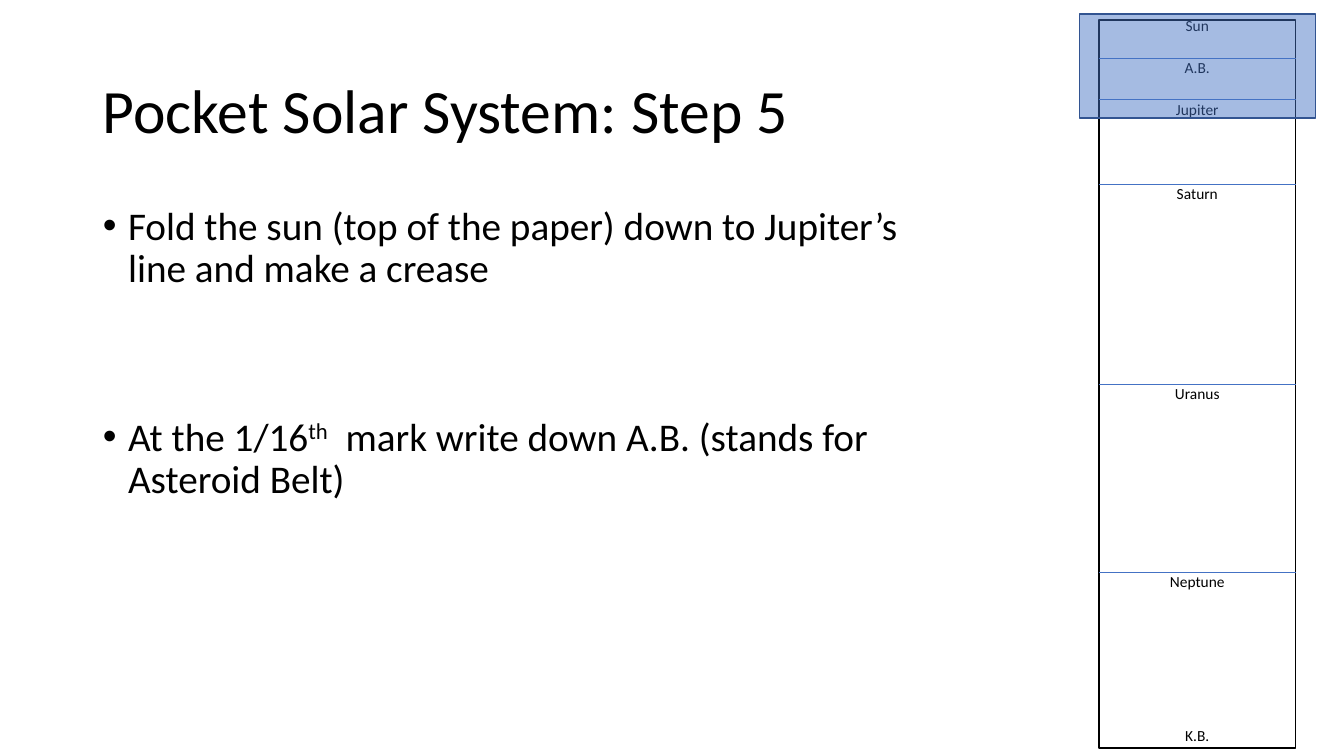
from dataclasses import dataclass

from pptx import Presentation
from pptx.dml.color import RGBColor as RGB
from pptx.enum.shapes import MSO_CONNECTOR as Conn, MSO_SHAPE as Shape
from pptx.enum.text import MSO_ANCHOR as Anchor, MSO_AUTO_SIZE as Fit, PP_ALIGN as Align
from pptx.oxml.ns import qn
from pptx.util import Inches, Pt


@dataclass(frozen=True)
class Theme:
    font: str = "Calibri"
    ink: str = "000000"
    paper: str = "FFFFFF"
    blue: str = "4472C4"
    edge: str = "325491"
    head: int = 44
    body: int = 28
    label: int = 11


THEME = Theme()

# Bullets: space before in points, then (text, is raised) runs
STEPS = [
    (10, [("Fold the sun (top of the paper) down to Jupiter’s line and make a crease", False)]),
    (90, [("At the 1/16", False), ("th", True),
          ("  mark write down A.B. (stands for Asteroid Belt)", False)]),
]

# Creases: name and distance below the top of the strip
FOLDS = [("A.B.", 0.38), ("Jupiter", 0.79), ("Saturn", 1.63),
         ("Uranus", 3.61), ("Neptune", 5.48)]


def apply(obj, form):
    for key, value in form.items():
        setattr(obj, key, value)


def place(shape, box):
    apply(shape, dict(zip(("left", "top", "width", "height"), map(Inches, box))))


def write(para, text, size):
    run = para.add_run()
    run.text = text
    apply(run.font, {"name": THEME.font, "size": Pt(size)})
    run.font.color.rgb = RGB.from_string(THEME.ink)
    return run


def title(slide, box, text):
    shape = slide.shapes.title
    place(shape, box)
    apply(shape.text_frame, {"vertical_anchor": Anchor.MIDDLE, "auto_size": Fit.NONE})
    para = shape.text_frame.paragraphs[0]
    apply(para, {"alignment": Align.LEFT, "line_spacing": 0.9})
    write(para, text, THEME.head)


def bullets(slide, box, steps):
    shape = slide.placeholders[1]
    place(shape, box)
    frame = shape.text_frame
    frame.auto_size = Fit.NONE
    for i, (gap, runs) in enumerate(steps):
        para = frame.add_paragraph() if i else frame.paragraphs[0]
        apply(para, {"line_spacing": 0.9, "space_before": Pt(gap)})
        props = para._p.get_or_add_pPr()
        props.set("marL", str(Inches(0.25)))
        props.set("indent", str(Inches(-0.25)))
        for text, raised in runs:
            run = write(para, text, THEME.body)
            if raised:
                run._r.get_or_add_rPr().set("baseline", "30000")


def rect(slide, box, fill, line):
    shape = slide.shapes.add_shape(Shape.RECTANGLE, *map(Inches, box))
    shape.shadow.inherit = False
    shape.fill.solid()
    shape.fill.fore_color.rgb = RGB.from_string(fill)
    shape.line.color.rgb = RGB.from_string(line)
    shape.line.width = Pt(1)
    return shape


def label(slide, box, text):
    frame = slide.shapes.add_textbox(*map(Inches, box)).text_frame
    frame.word_wrap = True
    para = frame.paragraphs[0]
    para.alignment = Align.CENTER
    write(para, text, THEME.label)


def crease(slide, x, y, width):
    line = slide.shapes.add_connector(Conn.STRAIGHT, *map(Inches, (x, y, x + width, y)))
    line.line.color.rgb = RGB.from_string(THEME.blue)
    line.line.width = Pt(0.5)
    props = line._element.spPr
    props.append(props.makeelement(qn("a:effectLst"), {}))


def strip(slide, box):
    x, y, width, height = box
    tall = 0.29
    rect(slide, box, THEME.paper, THEME.ink)
    # Ends of the paper
    label(slide, (x, y - 0.09, width, tall), "Sun")
    label(slide, (x, y + height - 0.27, width, tall), "K.B.")
    # Creases with their names
    for name, drop in FOLDS:
        crease(slide, x, y + drop, width)
        label(slide, (x, y + drop - 0.05, width, tall), name)
    # Highlight over the part to fold
    glow = rect(slide, (x - 0.19, y - 0.06, width + 0.39, 1.03), THEME.blue, THEME.edge)
    tint = glow._element.spPr.find(qn("a:solidFill"))[0]
    tint.append(tint.makeelement(qn("a:alpha"), {"val": "48000"}))


def main():
    deck = Presentation()
    apply(deck, {"slide_width": Inches(13.33), "slide_height": Inches(7.5)})
    slide = deck.slides.add_slide(deck.slide_layouts[1])
    title(slide, (0.92, 0.4, 11.5, 1.45), "Pocket Solar System: Step 5")
    bullets(slide, (0.92, 2, 8.74, 4.76), STEPS)
    strip(slide, (10.9, 0.2, 1.95, 7.22))
    deck.save("out.pptx")


if __name__ == "__main__":
    main()
